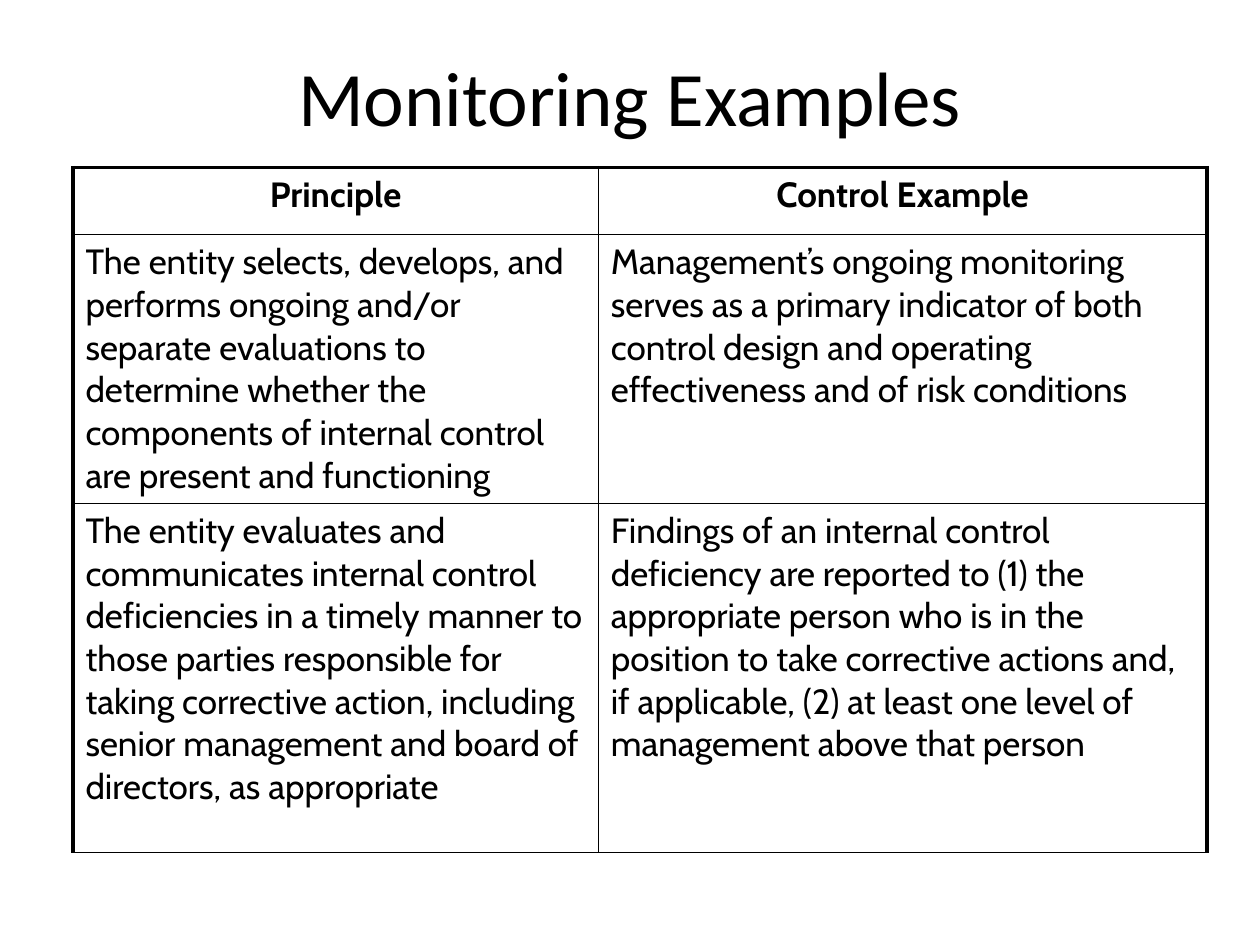
from dataclasses import dataclass

from lxml import etree
from pptx import Presentation
from pptx.dml.color import RGBColor
from pptx.enum.text import MSO_ANCHOR, PP_ALIGN
from pptx.oxml.ns import qn
from pptx.util import Cm, Pt

LEFT, CENTER = PP_ALIGN.LEFT, PP_ALIGN.CENTER
MIDDLE, TOP = MSO_ANCHOR.MIDDLE, MSO_ANCHOR.TOP
TITLE_ONLY = 5


@dataclass(frozen=True)
class Theme:
    ink: str = "000000"
    head_font: str = "Calibri"
    body_font: str = "Cabin"
    head_size: int = 44
    body_size: int = 20
    gap: int = 4
    thin: float = 1
    thick: float = 2.25


THEME = Theme()

COLS = [10.59, 12.27]
ROWS = [1.35, 5.33, 7.04]
CELLS = [
    ["Principle", "Control Example"],
    [
        "The entity selects, develops, and performs ongoing and/or separate "
        "evaluations to determine whether the components of internal control "
        "are present and functioning",
        "Management’s ongoing monitoring serves as a primary indicator of both "
        "control design and operating effectiveness and of risk conditions",
    ],
    [
        "The entity evaluates and communicates internal control deficiencies "
        "in a timely manner to those parties responsible for taking corrective "
        "action, including senior management and board of directors, as "
        "appropriate",
        "Findings of an internal control deficiency are reported to (1) the "
        "appropriate person who is in the position to take corrective actions "
        "and, if applicable, (2) at least one level of management above that "
        "person",
    ],
]


def write(frame, text, font=THEME.body_font, size=THEME.body_size,
          bold=False, align=LEFT, before=0):
    """Put one formatted paragraph into a text frame."""
    para = frame.paragraphs[0]
    para.alignment = align
    para.space_before = Pt(before)
    run = para.add_run()
    run.text = text
    run.font.name = font
    run.font.size = Pt(size)
    run.font.bold = bold
    run.font.color.rgb = RGBColor.from_string(THEME.ink)


def edge(cell, sides):
    """Draw the cell borders; sides maps L, R, T, B to widths in points."""
    props = cell._tc.get_or_add_tcPr()
    for spot, side in enumerate("LRTB"):
        line = etree.Element(qn(f"a:ln{side}"), w=str(Pt(sides[side])))
        fill = etree.SubElement(line, qn("a:solidFill"))
        etree.SubElement(fill, qn("a:srgbClr"), val=THEME.ink)
        props.insert(spot, line)


def add_title(slide, text):
    title = slide.shapes.title
    title.left, title.top = Cm(1.27), Cm(0)
    title.width, title.height = Cm(22.86), Cm(3.84)
    title.text_frame.vertical_anchor = MIDDLE
    write(title.text_frame, text, font=THEME.head_font,
          size=THEME.head_size, align=CENTER)


def add_grid(slide, cells):
    table = slide.shapes.add_table(
        len(ROWS), len(COLS), Cm(1.47), Cm(3.38),
        Cm(sum(COLS)), Cm(sum(ROWS))).table
    table.first_row = table.horz_banding = False
    for col, width in zip(table.columns, COLS):
        col.width = Cm(width)
    for row, height in zip(table.rows, ROWS):
        row.height = Cm(height)

    last = len(COLS) - 1
    for r, texts in enumerate(cells):
        for c, text in enumerate(texts):
            cell = table.cell(r, c)
            cell.fill.background()
            cell.vertical_anchor = TOP
            head = r == 0
            write(cell.text_frame, text, bold=head, before=THEME.gap,
                  align=CENTER if head else LEFT)
            # Thick outer frame, open to a thin line at the bottom
            edge(cell, {
                "L": THEME.thick if c == 0 else THEME.thin,
                "R": THEME.thick if c == last else THEME.thin,
                "T": THEME.thick if head else THEME.thin,
                "B": THEME.thin,
            })


def main():
    deck = Presentation()
    deck.slide_width, deck.slide_height = Cm(25.4), Cm(19.05)
    slide = deck.slides.add_slide(deck.slide_layouts[TITLE_ONLY])

    # Heading
    add_title(slide, "Monitoring Examples")

    # Principles and their control examples
    add_grid(slide, CELLS)

    deck.save("out.pptx")


if __name__ == "__main__":
    main()
